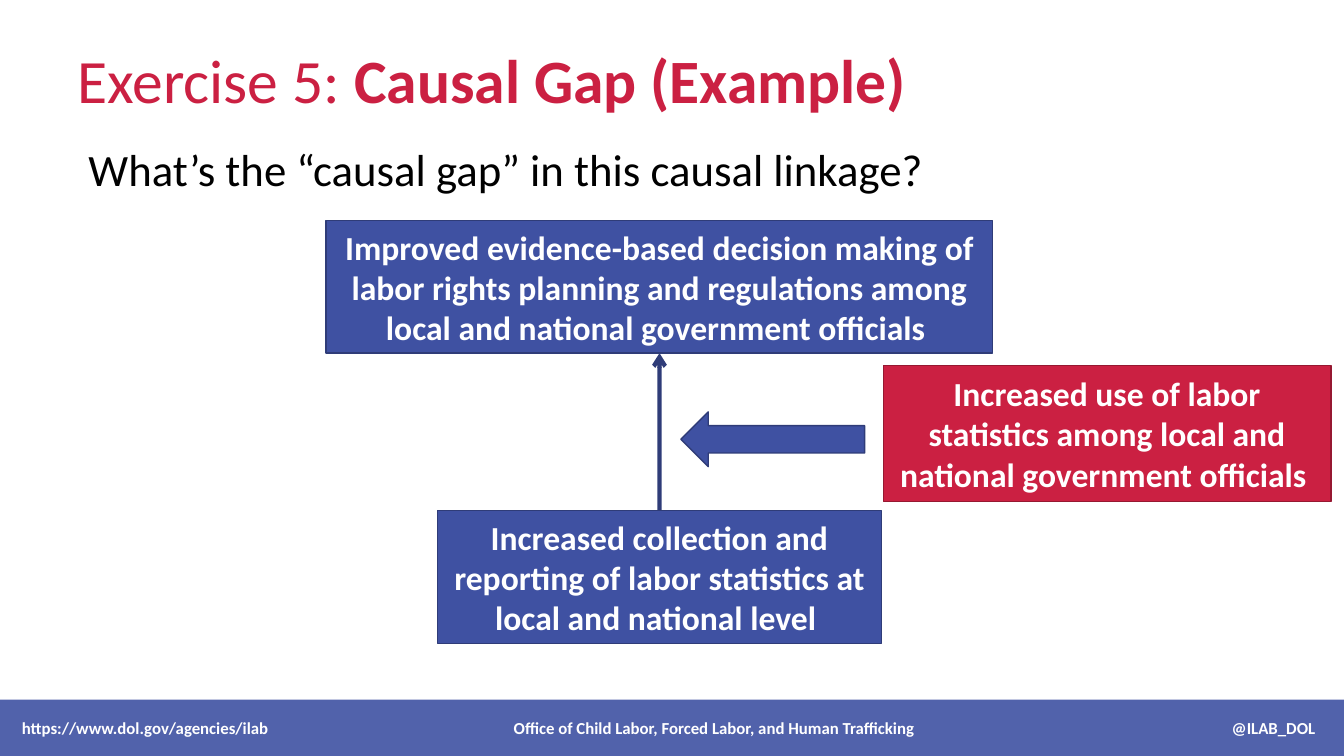
import dataclasses

import lxml.etree
import pptx
import pptx.dml.color
import pptx.enum.shapes
import pptx.enum.text
import pptx.oxml.ns
import pptx.util

Cm = pptx.util.Cm
Pt = pptx.util.Pt
ShapeKind = pptx.enum.shapes.MSO_SHAPE
Align = pptx.enum.text.PP_ALIGN
Anchor = pptx.enum.text.MSO_ANCHOR


@dataclasses.dataclass(frozen=True)
class Theme:
    font: str = "Calibri"
    blue: str = "3F51A2"
    blue_line: str = "2F3C78"
    red: str = "CB2042"
    red_line: str = "961831"
    white: str = "FFFFFF"
    black: str = "000000"
    title_size: int = 44
    question_size: int = 32
    box_size: int = 24
    footer_size: int = 12


@dataclasses.dataclass(frozen=True)
class Box:
    left: float
    top: float
    width: float
    height: float

    def inner(self, left, top, width, height):
        return Box(self.left + left, self.top + top, width, height)

    def lengths(self):
        return Cm(self.left), Cm(self.top), Cm(self.width), Cm(self.height)


THEME = Theme()


def rgb(value):
    return pptx.dml.color.RGBColor.from_string(value)


def add_xml(parent, tag, **attributes):
    element = lxml.etree.SubElement(parent, pptx.oxml.ns.qn(tag))
    for name, value in attributes.items():
        element.set(name, str(value))
    return element


def format_run(run, size, color, bold=False):
    run.font.name = THEME.font
    run.font.size = Pt(size)
    run.font.bold = bold
    run.font.color.rgb = rgb(color)


def prepare_text(shape, alignment):
    frame = shape.text_frame
    frame.word_wrap = True
    frame.vertical_anchor = Anchor.MIDDLE
    paragraph = frame.paragraphs[0]
    paragraph.alignment = alignment
    return paragraph


def add_heading(slide, box, parts, size, color):
    paragraph = prepare_text(slide.shapes.add_textbox(*box.lengths()), Align.LEFT)
    for text, bold in parts:
        run = paragraph.add_run()
        run.text = text
        format_run(run, size, color, bold)


def add_filled_shape(slide, kind, box, fill, line=None):
    shape = slide.shapes.add_shape(kind, *box.lengths())
    shape.shadow.inherit = False
    shape.fill.solid()
    shape.fill.fore_color.rgb = rgb(fill)
    if line:
        shape.line.color.rgb = rgb(line)
        shape.line.width = Pt(1)
    else:
        shape.line.fill.background()
    return shape


def add_statement(slide, box, text, fill, line):
    shape = add_filled_shape(slide, ShapeKind.RECTANGLE, box, fill, line)
    paragraph = prepare_text(shape, Align.CENTER)
    paragraph.text = text
    format_run(paragraph.runs[0], THEME.box_size, THEME.white, True)
    return shape


def add_causal_link(slide, cause, effect):
    connector = slide.shapes.add_connector(
        pptx.enum.shapes.MSO_CONNECTOR.STRAIGHT, 0, 0, 0, 0)
    connector.begin_connect(cause, 0)
    connector.end_connect(effect, 2)
    connector.line.color.rgb = rgb(THEME.blue_line)
    connector.line.width = Pt(3)
    add_xml(connector.line._get_or_add_ln(), "a:tailEnd", type="arrow")
    add_xml(connector._element.spPr, "a:effectLst")


def add_diagram(slide, box):
    effect = add_statement(
        slide, box.inner(0, 0, 16.8, 3.34),
        "Improved evidence-based decision making of labor rights planning "
        "and regulations among local and national government officials ",
        THEME.blue, THEME.blue_line)
    add_statement(
        slide, box.inner(14.04, 3.65, 11.28, 3.43),
        "Increased use of labor statistics among local and national "
        "government officials ",
        THEME.red, THEME.red_line)
    cause = add_statement(
        slide, box.inner(2.8, 7.31, 11.2, 3.34),
        "Increased collection and reporting of labor statistics at "
        "local and national level ",
        THEME.blue, THEME.blue_line)
    add_filled_shape(slide, ShapeKind.LEFT_ARROW, box.inner(8.94, 4.82, 4.63, 1.38),
                     THEME.blue, THEME.blue_line)
    add_causal_link(slide, cause, effect)


def add_footer(slide, box, texts):
    bar = add_filled_shape(slide, ShapeKind.RECTANGLE, box, THEME.blue)
    color = bar.fill._xPr.find(".//" + pptx.oxml.ns.qn("a:srgbClr"))
    add_xml(color, "a:alpha", val=90000)
    margin = 0.55
    bar.text_frame.margin_left = Cm(margin)
    paragraph = prepare_text(bar, Align.LEFT)
    paragraph.text = "\t".join(texts)
    format_run(paragraph.runs[0], THEME.footer_size, THEME.white, True)
    tabs = add_xml(paragraph._p.get_or_add_pPr(), "a:tabLst")
    for position, alignment in ((18, "ctr"), (33.15, "r")):
        add_xml(tabs, "a:tab", pos=int(Cm(position - margin)), algn=alignment)


def main():
    presentation = pptx.Presentation()
    presentation.slide_width = Cm(33.87)
    presentation.slide_height = Cm(19.05)
    slide = presentation.slides.add_slide(presentation.slide_layouts[6])
    add_heading(slide, Box(1.7, 1.2, 23.5, 1.58),
                (("Exercise 5: ", False), ("Causal Gap (Example)", True)),
                THEME.title_size, THEME.red)
    add_heading(slide, Box(1.98, 3.1, 24.33, 2.31),
                (("What’s the “causal gap” in this causal linkage?", False),),
                THEME.question_size, THEME.black)
    add_diagram(slide, Box(8.22, 5.56, 25.32, 10.65))
    add_footer(slide, Box(0, 17.63, 33.96, 1.42),
               ("https://www.dol.gov/agencies/ilab",
                "Office of Child Labor, Forced Labor, and Human Trafficking",
                "@ILAB_DOL"))
    presentation.save("out.pptx")


if __name__ == "__main__":
    main()
